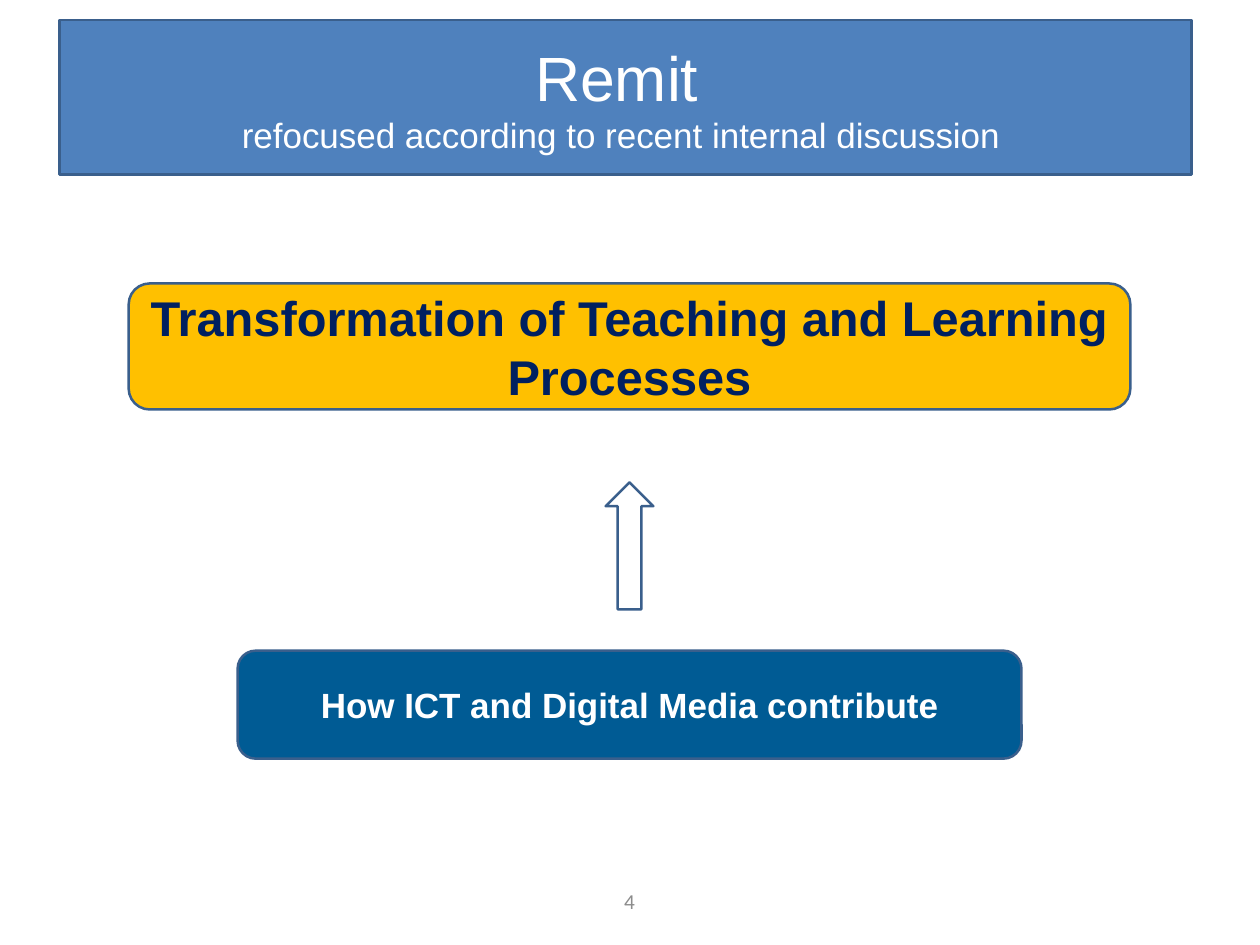
"""Build the remit slide: a title banner and two boxes joined by an arrow."""
from dataclasses import dataclass

from lxml.etree import SubElement
from pptx import Presentation
from pptx.dml.color import RGBColor
from pptx.enum.shapes import MSO_SHAPE as Shape
from pptx.enum.text import MSO_ANCHOR as Anchor, MSO_AUTO_SIZE as AutoSize, PP_ALIGN as Align
from pptx.oxml.ns import qn
from pptx.util import Inches, Pt

WHITE = RGBColor(0xFF, 0xFF, 0xFF)
GREY = RGBColor(0x8C, 0x8C, 0x8C)
NAVY = RGBColor(0x00, 0x20, 0x60)
BLUE = RGBColor(0x4F, 0x81, 0xBD)
DEEP_BLUE = RGBColor(0x00, 0x5B, 0x94)
OUTLINE = RGBColor(0x3A, 0x5F, 0x8C)
AMBER = RGBColor(0xFF, 0xC0, 0x00)


@dataclass
class Line:
    text: str
    size: int
    color: RGBColor
    bold: bool = False
    font: str = "Arial"


@dataclass
class Block:
    kind: Shape
    box: tuple[float, float, float, float]
    fill: RGBColor
    lines: tuple[Line, ...] = ()


BANNER = Block(Shape.ROUNDED_RECTANGLE, (0.66, 0.22, 12.58, 1.72), BLUE, (
    Line("Remit ", 50, WHITE),
    Line("refocused according to recent internal discussion ", 28, WHITE),
))
BLOCKS = (
    Block(Shape.ROUNDED_RECTANGLE, (2.64, 7.23, 8.71, 1.2), DEEP_BLUE,
          (Line("How ICT and Digital Media contribute", 28, WHITE, True),)),
    Block(Shape.UP_ARROW, (6.73, 5.36, 0.53, 1.41), WHITE),
    Block(Shape.ROUNDED_RECTANGLE, (1.43, 3.15, 11.13, 1.4), AMBER,
          (Line("Transformation of Teaching and Learning Processes", 39, NAVY, True),)),
)


def write(sp, lines: tuple[Line, ...]) -> None:
    tf = sp.text_frame
    tf.word_wrap = True
    tf.auto_size = AutoSize.NONE
    tf.vertical_anchor = Anchor.MIDDLE
    tf.margin_left = tf.margin_right = Inches(0.14)
    tf.margin_top = tf.margin_bottom = Inches(0.07)
    tf.text = "\n".join(line.text for line in lines)
    for p, line in zip(tf.paragraphs, lines):
        p.alignment = Align.CENTER
        for r in p.runs:
            r.font.name = line.font
            r.font.size = Pt(line.size)
            r.font.bold = line.bold
            r.font.color.rgb = line.color


def paint(sp, block: Block) -> None:
    sp.fill.solid()
    sp.fill.fore_color.rgb = block.fill
    sp.line.color.rgb = OUTLINE
    sp.line.width = Pt(2)
    sp.shadow.inherit = False
    if block.lines:
        write(sp, block.lines)


def add_banner(s, block: Block) -> None:
    sp = s.shapes.title
    sp.left, sp.top, sp.width, sp.height = map(Inches, block.box)
    geom = SubElement(sp.element.spPr, qn("a:prstGeom"), prst="roundRect")
    SubElement(geom, qn("a:avLst"))
    paint(sp, block)


def add_block(s, block: Block) -> None:
    paint(s.shapes.add_shape(block.kind, *map(Inches, block.box)), block)


def add_page_number(s, number: str) -> None:
    sp = s.shapes.add_textbox(*map(Inches, (4.78, 9.73, 4.43, 0.56)))
    write(sp, (Line(number, 17, GREY, font="Calibri"),))


def main() -> None:
    prs = Presentation()
    prs.slide_width, prs.slide_height = Inches(14), Inches(10.5)
    s = prs.slides.add_slide(prs.slide_layouts[5])
    add_banner(s, BANNER)
    add_page_number(s, "4")
    for block in BLOCKS:
        add_block(s, block)
    prs.save("out.pptx")


if __name__ == "__main__":
    main()
